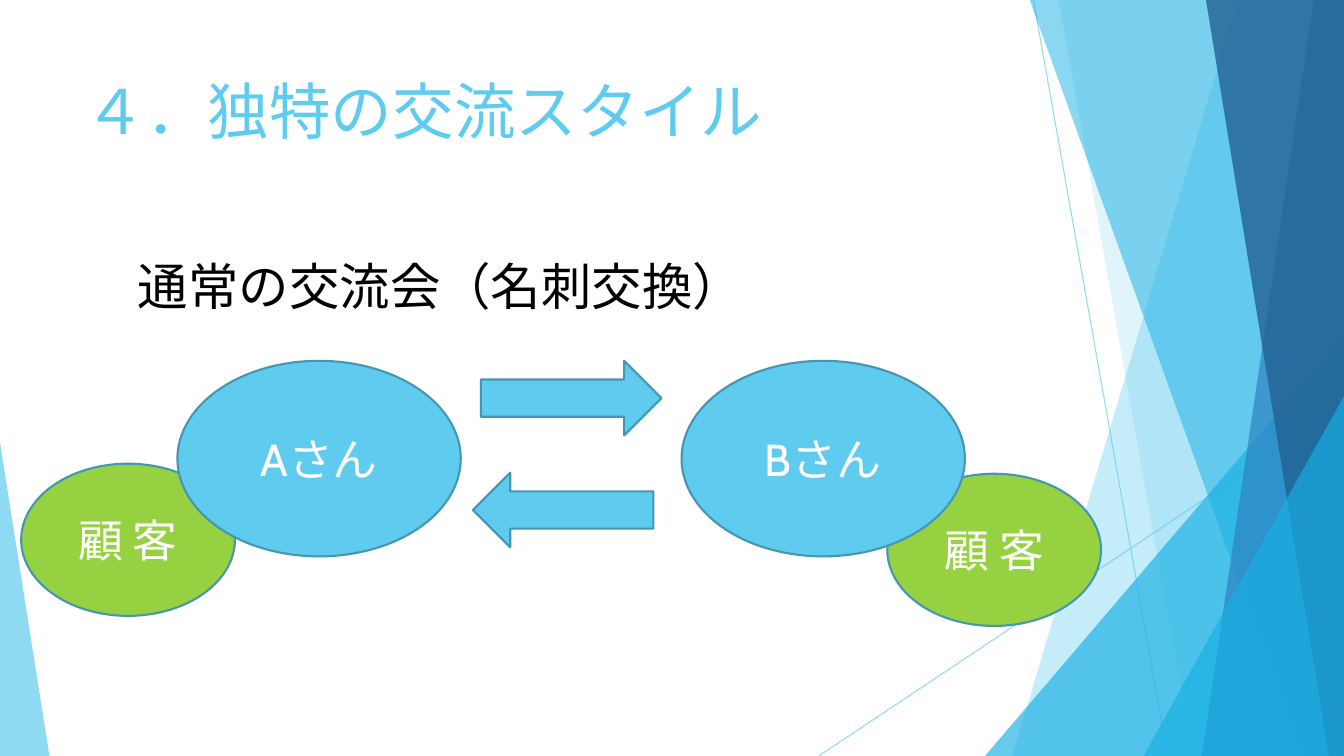
from pptx import Presentation
from pptx import util as u
from pptx.dml import color
from pptx.enum import lang, shapes, text
from pptx.oxml import ns, xmlchemy

SKY, DEEP, GREEN, EDGE = "5FCBEF", "17B0E4", "96D141", "4696B1"
WHITE, BLACK = "FFFFFF", "000000"
KIND = shapes.MSO_SHAPE
TOP, END, SIDE = -0.01, 7.5, 13.33


def rgb(code):
    return color.RGBColor.from_string(code)


def fade(item, share):
    """Give every colour of a shape the opacity in percent."""
    for node in item._element.spPr.iter(ns.qn("a:srgbClr")):
        alpha = xmlchemy.OxmlElement("a:alpha")
        alpha.set("val", str(share * 1000))
        node.append(alpha)


class Page:
    font = {"name": "Cabin", "language_id": lang.MSO_LANGUAGE_ID.JAPANESE}

    def __init__(self, deck):
        self.items = deck.slides.add_slide(deck.slide_layouts[6]).shapes

    def paint(self, item, fill, edge=None, share=None):
        item.shadow.inherit = False
        item.fill.solid()
        item.fill.fore_color.rgb = rgb(fill)
        if edge:
            item.line.color.rgb = rgb(edge)
            item.line.width = u.Pt(1.5)
        else:
            item.line.fill.background()
        if share:
            fade(item, share)

    def words(self, item, phrase, size, tint, align, frame):
        for key, val in frame.items():
            setattr(item.text_frame, key, val)
        para = item.text_frame.paragraphs[0]
        para.alignment = align
        run = para.add_run()
        run.text = phrase
        for key, val in {**self.font, "size": u.Pt(size)}.items():
            setattr(run.font, key, val)
        run.font.color.rgb = rgb(tint)

    def line(self, start, stop):
        item = self.items.add_connector(
            shapes.MSO_CONNECTOR.STRAIGHT, *map(u.Inches, start + stop))
        item.line.color.rgb = rgb(SKY)
        item.line.width = u.Pt(0.75)
        item._element.spPr.append(xmlchemy.OxmlElement("a:effectLst"))
        fade(item, 70)

    def band(self, head, foot, fill, share):
        """Facet from its slanted left edge to the right slide edge."""
        spots = [(head, TOP), (SIDE, TOP), (SIDE, END), (foot, END)]
        spots = [(u.Inches(x), u.Inches(y)) for x, y in spots]
        pen = self.items.build_freeform(*spots[0])
        pen.add_line_segments(spots[1:], close=True)
        self.paint(pen.convert_to_shape(), fill, share=share)

    def shape(self, kind, box, fill, edge=None, share=None, adj=None):
        item = self.items.add_shape(kind, *map(u.Inches, box))
        if adj is not None:
            item.adjustments[0] = adj
        self.paint(item, fill, edge, share)
        return item

    def oval(self, box, phrase, fill):
        item = self.shape(KIND.OVAL, box, fill, EDGE)
        self.words(item, phrase, 32, WHITE, text.PP_ALIGN.CENTER,
                   {"word_wrap": True, "vertical_anchor": text.MSO_ANCHOR.MIDDLE})

    def label(self, box, phrase, size, tint, wrap):
        item = self.items.add_textbox(*map(u.Inches, box))
        self.words(item, phrase, size, tint, text.PP_ALIGN.LEFT,
                   {"word_wrap": wrap, "vertical_anchor": text.MSO_ANCHOR.TOP})


def main():
    deck = Presentation()
    deck.slide_width, deck.slide_height = u.Inches(SIDE), u.Inches(END)
    page = Page(deck)

    # Faceted backdrop
    page.line((10.25, 0), (11.58, END))
    page.line((SIDE, 4.03), (8.12, END))
    page.band(12.28, 10.04, SKY, 36)
    page.band(10.5, 11.83, SKY, 20)
    page.shape(KIND.ISOSCELES_TRIANGLE, (9.77, 3.33, 3.56, 4.17), DEEP, share=66, adj=1)
    page.band(10.21, 12.91, DEEP, 50)
    page.band(13.03, 11.92, "2E83C3", 70)
    page.band(11.96, 13.18, "226292", 80)
    page.shape(KIND.ISOSCELES_TRIANGLE, (11.34, 3.93, 1.99, 3.57), DEEP, share=66, adj=1)
    page.shape(KIND.ISOSCELES_TRIANGLE, (0, 4.39, 0.49, 3.11), SKY, share=70, adj=0)

    # Headings
    page.label((0.74, 0.67, 11.31, 1.44), "４．独特の交流スタイル", 44, SKY, True)
    page.label((1.27, 2.48, 6.26, 0.71), "通常の交流会（名刺交換）", 36, BLACK, False)

    # Each person in front of a client
    for name, left, client in (("Aさん", 1.76, (0.21, 4.6)),
                               ("Bさん", 6.76, (8.8, 4.7))):
        page.oval((*client, 2.12, 1.51), "顧 客", GREEN)
        page.oval((left, 3.58, 2.81, 1.94), name, SKY)

    # Exchange of cards
    page.shape(KIND.RIGHT_ARROW, (4.77, 3.58, 1.79, 0.74), SKY, EDGE)
    page.shape(KIND.LEFT_ARROW, (4.69, 4.69, 1.79, 0.74), SKY, EDGE)

    deck.save("out.pptx")


if __name__ == "__main__":
    main()
